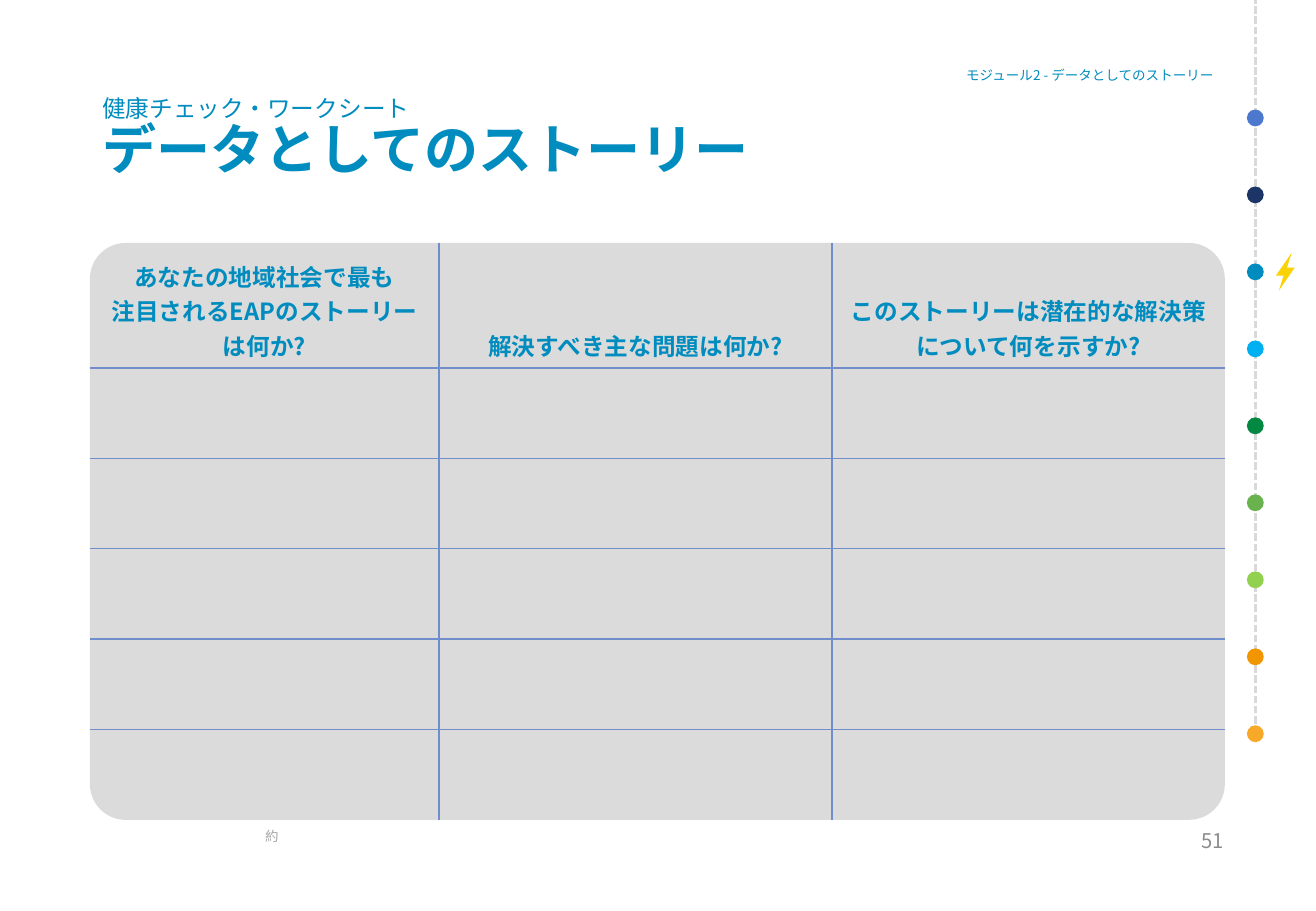
from lxml.etree import SubElement
from pptx import Presentation
from pptx.dml.color import RGBColor
from pptx.enum.dml import MSO_LINE
from pptx.enum.shapes import MSO_CONNECTOR, MSO_SHAPE
from pptx.enum.text import MSO_ANCHOR, MSO_AUTO_SIZE, PP_ALIGN
from pptx.oxml.ns import qn
from pptx.util import Pt

FONT = "Noto Sans CJK JP"
HUES = {
    "main": "008CBE", "panel": "DBDBDB", "grid": "6F8ECB", "dash": "D9D9D9",
    "foot": "A6A6A6", "page": "8C8C8C", "bolt": "FAD307",
}
DOTS = ["4C78CE", "1C3567", "008CBE", "00B0F0", "038842",
        "6AB24D", "92D050", "F19500", "F8A92A"]
LOOKS = {
    "kicker": {"size": Pt(14), "bold": False},
    "title": {"size": Pt(32), "bold": True},
    "head": {"size": Pt(14), "bold": True},
    "small": {"size": Pt(8), "bold": False},
    "page": {"size": Pt(12), "bold": False},
}
LEFT, TOP, WIDE, HIGH = 53.3, 144, 672.5, 342
COLS = [206.9, 232.8, 232.8]
ROWS = [74.2] + [53.56] * 5
HEADS = [
    ["あなたの地域社会で最も", "注目されるEAPのストーリーは何か?"],
    ["解決すべき主な問題は何か?"],
    ["このストーリーは潜在的な解決策について何を示すか?"],
]
AXIS, FIRST, STEP, SIZE = 743.8, 64.9, 45.63, 10


def assign(item, values):
    for name, value in values.items():
        setattr(item, name, value)


class Sheet:
    def __init__(self, slide):
        self.slide = slide
        self.shapes = slide.shapes

    def place(self, shape, x, y, w, h):
        names = ("left", "top", "width", "height")
        assign(shape, dict(zip(names, map(Pt, (x, y, w, h)))))

    def letter(self, para, text, look, hue="main"):
        run = para.add_run()
        run.text = text
        assign(run.font, {"name": FONT, **LOOKS[look]})
        run.font.color.rgb = RGBColor.from_string(HUES[hue])
        SubElement(run.font._element, qn("a:ea")).set("typeface", FONT)

    def holder(self, shape, box, lines, anchor, align):
        self.place(shape, *box)
        frame = shape.text_frame
        assign(frame, {"word_wrap": True, "vertical_anchor": anchor,
                       "auto_size": MSO_AUTO_SIZE.NONE})
        para = frame.paragraphs[0]
        props = para._p.get_or_add_pPr()
        props.set("marL", "0")
        props.set("indent", "0")
        SubElement(props, qn("a:buNone"))
        assign(para, {"alignment": align, "line_spacing": 0.9,
                      "space_before": Pt(0)})
        for i, (text, look) in enumerate(lines):
            if i:
                para.add_line_break()
            self.letter(para, text, look)

    def label(self, box, text, look, hue, align):
        frame = self.shapes.add_textbox(*map(Pt, box)).text_frame
        frame.word_wrap = True
        para = frame.paragraphs[0]
        para.alignment = align
        self.letter(para, text, look, hue)

    def paint(self, shape, color):
        shape.shadow.inherit = False
        shape.fill.solid()
        shape.fill.fore_color.rgb = RGBColor.from_string(color)
        shape.line.fill.background()

    def form(self, kind, box, color):
        shape = self.shapes.add_shape(kind, *map(Pt, box))
        self.paint(shape, color)
        return shape

    def outline(self, points, color):
        start, *rest = [(Pt(x), Pt(y)) for x, y in points]
        shape = self.shapes.build_freeform(*start)
        shape.add_line_segments(rest, close=True)
        self.paint(shape.convert_to_shape(), color)

    def dashes(self, x, y, end):
        link = self.shapes.add_connector(
            MSO_CONNECTOR.STRAIGHT, Pt(x), Pt(y), Pt(x), Pt(end))
        assign(link.line, {"width": Pt(1.5), "dash_style": MSO_LINE.SQUARE_DOT})
        link.line.color.rgb = RGBColor.from_string(HUES["dash"])
        SubElement(link._element.spPr, qn("a:effectLst"))

    def edge(self, cell, side, shown):
        line = SubElement(cell._tc.get_or_add_tcPr(), qn("a:ln" + side))
        line.set("w", str(Pt(1)))
        if shown:
            fill = SubElement(line, qn("a:solidFill"))
            SubElement(fill, qn("a:srgbClr")).set("val", HUES["grid"])
        else:
            SubElement(line, qn("a:noFill"))

    def grid(self):
        table = self.shapes.add_table(
            len(ROWS), len(COLS), *map(Pt, (LEFT, TOP, WIDE, HIGH))).table
        assign(table, {"first_row": False, "horz_banding": False})
        for col, width in zip(table.columns, COLS):
            col.width = Pt(width)
        for r, height in enumerate(ROWS):
            table.rows[r].height = Pt(height)
            for c in range(len(COLS)):
                cell = table.cell(r, c)
                inner = {"L": c > 0, "R": c < len(COLS) - 1,
                         "T": r > 0, "B": r < len(ROWS) - 1}
                for side, shown in inner.items():
                    self.edge(cell, side, shown)
                cell.fill.background()
        for c, lines in enumerate(HEADS):
            cell = table.cell(0, c)
            cell.vertical_anchor = MSO_ANCHOR.BOTTOM
            frame = cell.text_frame
            for i, text in enumerate(lines):
                para = frame.add_paragraph() if i else frame.paragraphs[0]
                para.alignment = PP_ALIGN.CENTER
                self.letter(para, text, "head")


def main():
    deck = Presentation()
    assign(deck, {"slide_width": Pt(779.76), "slide_height": Pt(540)})
    slide = deck.slides.add_slide(deck.slide_layouts[1])
    sheet = Sheet(slide)

    # Title and module name
    sheet.holder(slide.shapes.title, (LEFT, 54, WIDE, 77.8),
                 [("健康チェック・ワークシート", "kicker"),
                  ("データとしてのストーリー", "title")],
                 MSO_ANCHOR.TOP, PP_ALIGN.LEFT)
    sheet.holder(slide.placeholders[1], (480.2, 36, 246.2, 17.3),
                 [("モジュール2 - データとしてのストーリー", "small")],
                 MSO_ANCHOR.BOTTOM, PP_ALIGN.RIGHT)

    # Worksheet
    panel = sheet.form(MSO_SHAPE.ROUNDED_RECTANGLE,
                       (LEFT, TOP, WIDE, HIGH), HUES["panel"])
    panel.adjustments[0] = 0.062
    sheet.grid()

    # Footer
    sheet.label((150, 487.4, 36, 28.8), "約", "small", "foot", PP_ALIGN.LEFT)
    sheet.label((689.8, 487.4, 42.5, 28.8), "51", "page", "page",
                PP_ALIGN.RIGHT)

    # Progress rail
    sheet.dashes(AXIS, 434.9, 0)
    for i, color in enumerate(DOTS):
        box = (AXIS - SIZE / 2, FIRST + i * STEP, SIZE, SIZE)
        sheet.form(MSO_SHAPE.OVAL, box, color)

    # Bolt: one half and its half turn
    half = [(761, 163.4), (756, 163.4), (765.4, 149.8), (761.8, 161.3)]
    turn = [(1523.2 - x, 322 - y) for x, y in half]
    for points in (half, turn):
        sheet.outline(points, HUES["bolt"])

    deck.save("out.pptx")


if __name__ == "__main__":
    main()
